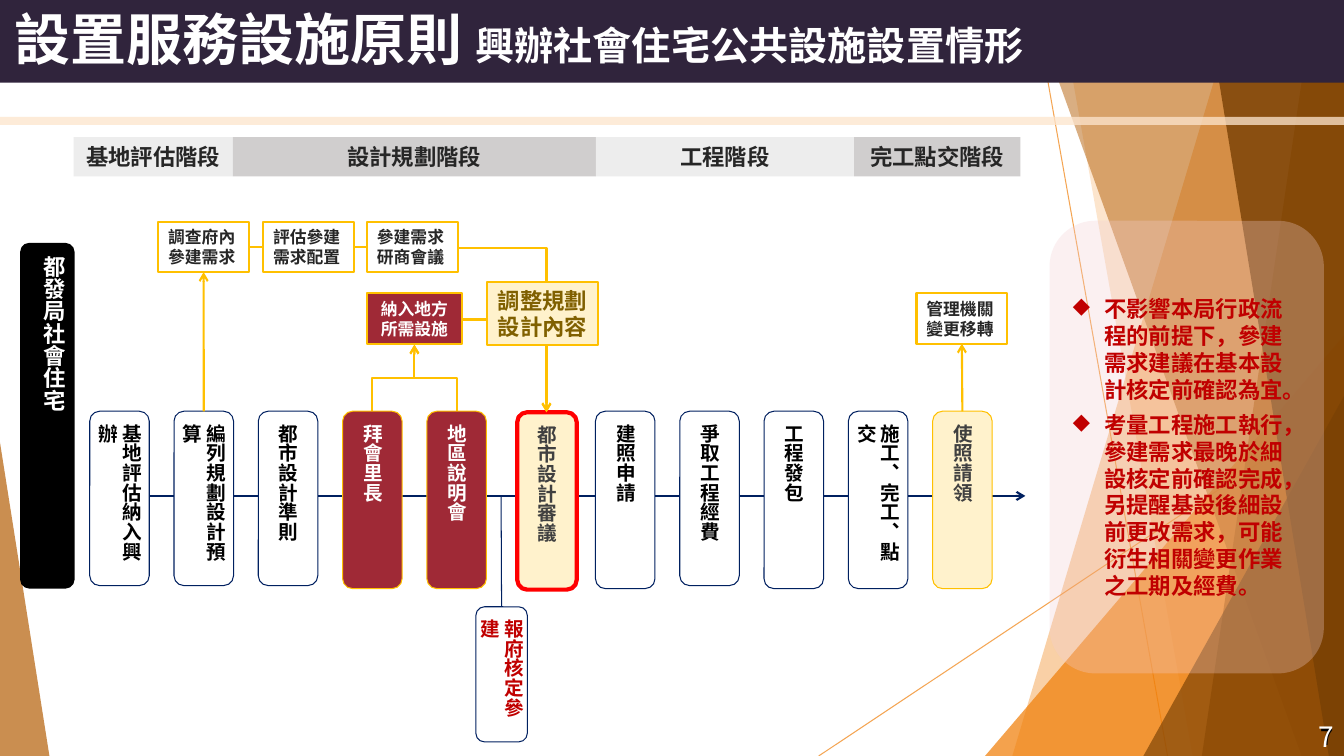
from dataclasses import dataclass

from lxml.etree import SubElement
from pptx import Presentation
from pptx.dml.color import RGBColor
from pptx.enum.shapes import MSO_CONNECTOR, MSO_SHAPE
from pptx.enum.text import MSO_ANCHOR, MSO_AUTO_SIZE, PP_ALIGN
from pptx.oxml.ns import qn
from pptx.util import Inches, Pt


@dataclass(frozen=True)
class Theme:
    """Font, colours and type sizes of the slide."""
    font: str = "Noto Sans CJK SC"
    white: str = "FFFFFF"
    black: str = "000000"
    ink: str = "262626"
    grey: str = "404040"
    title_bar: str = "30243C"
    rule: str = "FDE5CD"
    orange: str = "F07F09"
    rust: str = "B45F07"
    brown: str = "784004"
    light_band: str = "EDEDED"
    dark_band: str = "D0CECE"
    navy: str = "002060"
    gold: str = "FFC000"
    cream: str = "FFF2CC"
    olive: str = "806000"
    wine: str = "9F2936"
    pink: str = "F2CED2"
    red: str = "FF0000"
    crimson: str = "C00000"
    title: int = 40
    subtitle: int = 28
    page: int = 20
    head: int = 16
    stage: int = 14
    note: int = 12


class Deck:
    """Draws elements on the current slide in one style."""

    def __init__(self, prs, theme):
        self.t = theme
        self.s = prs.slides.add_slide(prs.slide_layouts[6])

    def alpha(self, sp, percent):
        """Make every colour of a shape partly transparent."""
        for clr in sp._element.iter(qn("a:srgbClr")):
            SubElement(clr, qn("a:alpha"), val=str(percent * 1000))

    def paint(self, sp, fill, line=None, width=0.75, alpha=None):
        """Set fill, outline and opacity of a shape."""
        sp.shadow.inherit = False
        sp.fill.solid()
        sp.fill.fore_color.rgb = RGBColor.from_string(fill)
        if alpha:
            self.alpha(sp, alpha)
        if line:
            sp.line.color.rgb = RGBColor.from_string(line)
            sp.line.width = Pt(width)
        else:
            sp.line.fill.background()
        return sp

    def shape(self, kind, x, y, w, h, fill, line=None, width=0.75, alpha=None):
        """Add a preset shape."""
        sp = self.s.shapes.add_shape(kind, Inches(x), Inches(y), Inches(w), Inches(h))
        return self.paint(sp, fill, line, width, alpha)

    def triangle(self, x, y, w, h, apex, fill, alpha):
        """Add a right triangle whose top is at the given side."""
        sp = self.shape(MSO_SHAPE.ISOSCELES_TRIANGLE, x, y, w, h, fill, alpha=alpha)
        sp.adjustments[0] = apex

    def facet(self, top, bottom, fill, alpha):
        """Add a full-height facet reaching the right edge."""
        fb = self.s.shapes.build_freeform(Inches(top), 0, scale=1.0)
        corners = [(13.33, 0), (13.33, 7.5), (bottom, 7.5)]
        fb.add_line_segments([(Inches(x), Inches(y)) for x, y in corners], close=True)
        self.paint(fb.convert_to_shape(), fill, alpha=alpha)

    def style_run(self, r, size, color, bold=True):
        """Format one run."""
        r.font.size, r.font.bold, r.font.name = Pt(size), bold, self.t.font
        r.font.color.rgb = RGBColor.from_string(color)
        SubElement(r._r.get_or_add_rPr(), qn("a:ea"), typeface=self.t.font)

    def text(self, sp, text, size, color, align=PP_ALIGN.LEFT, anchor=MSO_ANCHOR.MIDDLE,
             bold=True, vertical=False, grow=False):
        """Write formatted text into a shape."""
        tf = sp.text_frame
        tf.word_wrap = True
        tf.vertical_anchor = anchor
        if vertical:
            tf._txBody.bodyPr.set("vert", "eaVert")
        if grow:
            tf.auto_size = MSO_AUTO_SIZE.SHAPE_TO_FIT_TEXT
        tf.text = text
        for p in tf.paragraphs:
            p.alignment = align
            p.line_spacing = Pt(size * 1.2)
            for r in p.runs:
                self.style_run(r, size, color, bold)
        return sp

    def textbox(self, x, y, w, h, text, size, color, **style):
        """Add a text box."""
        sp = self.s.shapes.add_textbox(Inches(x), Inches(y), Inches(w), Inches(h))
        return self.text(sp, text, size, color, **style)

    def bullets(self, sp, char):
        """Turn the paragraphs of a shape into a bulleted list."""
        for p in sp.text_frame.paragraphs:
            p.space_before = Pt(6)
            pPr = p._p.get_or_add_pPr()
            pPr.set("marL", str(Inches(0.31)))
            pPr.set("indent", str(Inches(-0.31)))
            SubElement(pPr, qn("a:buChar"), char=char)

    def stage(self, x, y, w, h, text, fill, line, color, width=0.75):
        """Add a rounded box with vertical text."""
        sp = self.shape(MSO_SHAPE.ROUNDED_RECTANGLE, x, y, w, h, fill, line, width)
        return self.text(sp, text, self.t.stage, color, vertical=True)

    def note(self, x, y, text, w=0.9, fill=Theme.white, color=Theme.ink, align=PP_ALIGN.LEFT):
        """Add a small gold-framed box."""
        sp = self.shape(MSO_SHAPE.RECTANGLE, x, y, w, 0.5, fill, self.t.gold, 1.5)
        return self.text(sp, text, self.t.note, color, align, MSO_ANCHOR.TOP, grow=True)

    def line(self, x1, y1, x2, y2, color=Theme.gold, width=1.5, arrow=False,
             kind=MSO_CONNECTOR.STRAIGHT, begin=None, end=None):
        """Add a connector, joined to (shape, site) pairs if given."""
        cn = self.s.shapes.add_connector(kind, Inches(x1), Inches(y1), Inches(x2), Inches(y2))
        cn.line.color.rgb = RGBColor.from_string(color)
        cn.line.width = Pt(width)
        if arrow:
            SubElement(cn.line._get_or_add_ln(), qn("a:tailEnd"), type="arrow")
        SubElement(cn._element.spPr, qn("a:effectLst"))
        if begin:
            cn.begin_connect(*begin)
        if end:
            cn.end_connect(*end)
        return cn

    def corner(self, x1, y1, x2, y2):
        """Add an arrow that runs across and then down."""
        cn = self.line(x1, y1, x2, y2, arrow=True, kind=MSO_CONNECTOR.ELBOW)
        cn._element.spPr.find(qn("a:prstGeom")).set("prst", "bentConnector2")

    def riser(self, x1, y1, x2, y2):
        """Add an arrow that runs up, across and up again."""
        cx, cy, half, rise = (x1 + x2) / 2, (y1 + y2) / 2, (y1 - y2) / 2, (x1 - x2) / 2
        cn = self.line(cx - half, cy + rise, cx + half, cy - rise, arrow=True,
                       kind=MSO_CONNECTOR.ELBOW)
        cn._element.spPr.find(qn("a:xfrm")).set("rot", "16200000")


def main():
    """Build the slide and save it."""
    prs = Presentation()
    prs.slide_width, prs.slide_height = Inches(13.33), Inches(7.5)
    t = Theme()
    d = Deck(prs, t)
    rect, rounded = MSO_SHAPE.RECTANGLE, MSO_SHAPE.ROUNDED_RECTANGLE
    center, right, top = PP_ALIGN.CENTER, PP_ALIGN.RIGHT, MSO_ANCHOR.TOP

    for ends in [(10.25, 0, 11.58, 7.5), (13.33, 4.03, 8.12, 7.5)]:
        d.alpha(d.line(*ends, color=t.orange, width=0.75), 70)
    d.facet(12.28, 10.04, t.orange, 36)
    d.facet(10.5, 11.83, t.orange, 20)
    d.triangle(9.77, 3.33, 3.56, 4.17, 1, t.orange, 72)
    d.facet(10.21, 12.91, t.rust, 50)
    d.facet(13.03, 11.92, t.rust, 70)
    d.facet(11.96, 13.18, t.brown, 80)
    d.triangle(11.34, 3.93, 1.99, 3.57, 1, t.brown, 66)
    d.triangle(0, 4.39, 0.49, 3.11, 0, t.rust, 70)

    d.shape(rect, 0, 0, 13.33, 0.82, t.title_bar)
    d.textbox(10.22, 7.13, 3.11, 0.4, "7", t.head, t.black, align=right, anchor=top)
    title = d.textbox(0.05, -0.07, 13.28, 0.89, "設置服務設施原則 ", t.title, t.white)
    r = title.text_frame.paragraphs[0].add_run()
    r.text = "興辦社會住宅公共設施設置情形"
    d.style_run(r, t.subtitle, t.white)
    d.textbox(12.84, 7.1, 0.49, 0.4, "7", t.page, t.white, align=right, bold=False)
    d.shape(rect, 0, 1.16, 13.33, 0.08, t.rule, alpha=76)

    phases = ["基地評估階段", "設計規劃階段", "工程階段", "完工點交階段"]
    edges = [0.73, 2.31, 5.91, 8.47, 10.12]
    for i, phase in enumerate(phases):
        sp = d.shape(rect, edges[i], 1.36, edges[i + 1] - edges[i], 0.39,
                     t.dark_band if i % 2 else t.light_band)
        d.text(sp, phase, t.head, t.ink, center)

    d.line(1.17, 4.92, 10.17, 4.92, t.navy, arrow=True)
    owner = d.shape(rounded, 0.2, 2.41, 0.54, 3.43, t.black)
    d.text(owner, "都發局社會住宅", t.head, t.white, center, top, vertical=True, grow=True)

    plain = (t.white, t.navy, t.black)
    local = (t.wine, t.gold, t.white)
    permit = (t.cream, t.gold, t.grey)
    stages = [("基地評估納入興辦", 1.73, plain), ("編列規劃設計預算", 1.73, plain),
              ("都市設計準則", 1.73, plain), ("拜會里長", 1.76, local),
              ("地區說明會", 1.76, local), None, ("建照申請", 1.76, plain),
              ("爭取工程經費", 1.73, plain), ("工程發包", 1.76, plain),
              ("施工、完工、點交", 1.76, plain), ("使照請領", 1.76, permit)]
    boxes = [item and d.stage(0.89 + 8.36 / 10 * i, 4.08, 0.59, item[1], item[0], *item[2])
             for i, item in enumerate(stages)]
    d.stage(5.13, 4.09, 0.59, 1.76, "都市設計審議", t.cream, t.red, t.grey, 3)

    survey = d.note(1.57, 2.2, "調查府內參建需求")
    meeting = d.note(3.64, 2.2, "參建需求研商會議")
    d.note(3.64, 2.91, "納入地方所需設施", 0.94, t.wine, t.white, center)
    handover = d.note(9.09, 2.91, "管理機關變更移轉")
    d.line(2.02, 4.08, 2.02, 2.71, arrow=True, begin=(boxes[1], 0), end=(survey, 2))
    d.line(2.48, 2.46, 3.64, 2.46, begin=(survey, 3), end=(meeting, 1))
    d.note(2.61, 2.2, "評估參建需求配置")
    d.line(9.54, 4.08, 9.54, 3.42, arrow=True, begin=(boxes[10], 0), end=(handover, 2))
    d.corner(4.54, 2.46, 5.42, 4.09)
    d.corner(4.58, 3.17, 5.42, 4.09)
    adjust = d.shape(rect, 4.83, 2.8, 1.1, 0.62, t.cream, t.gold, 1.5)
    d.text(adjust, "調整規劃設計內容", t.head, t.olive, center)
    for x in (3.69, 4.53):
        d.riser(x, 4.08, 4.11, 3.42)

    report = d.stage(4.72, 6.02, 0.51, 1.34, "報府核定參建", t.white, t.navy, t.crimson)
    d.line(4.98, 6.02, 4.97, 4.92, t.navy, 0.75, begin=(report, 0))

    panel = d.shape(rounded, 10.41, 2.19, 2.72, 4.49, t.pink, alpha=30)
    advice = ["不影響本局行政流程的前提下，參建需求建議在基本設計核定前確認為宜。",
              "考量工程施工執行，參建需求最晚於細設核定前確認完成，"
              "另提醒基設後細設前更改需求，可能衍生相關變更作業之工期及經費。"]
    d.bullets(d.text(panel, "\n".join(advice), t.head, t.crimson), "◆")
    prs.save("out.pptx")


if __name__ == "__main__":
    main()
